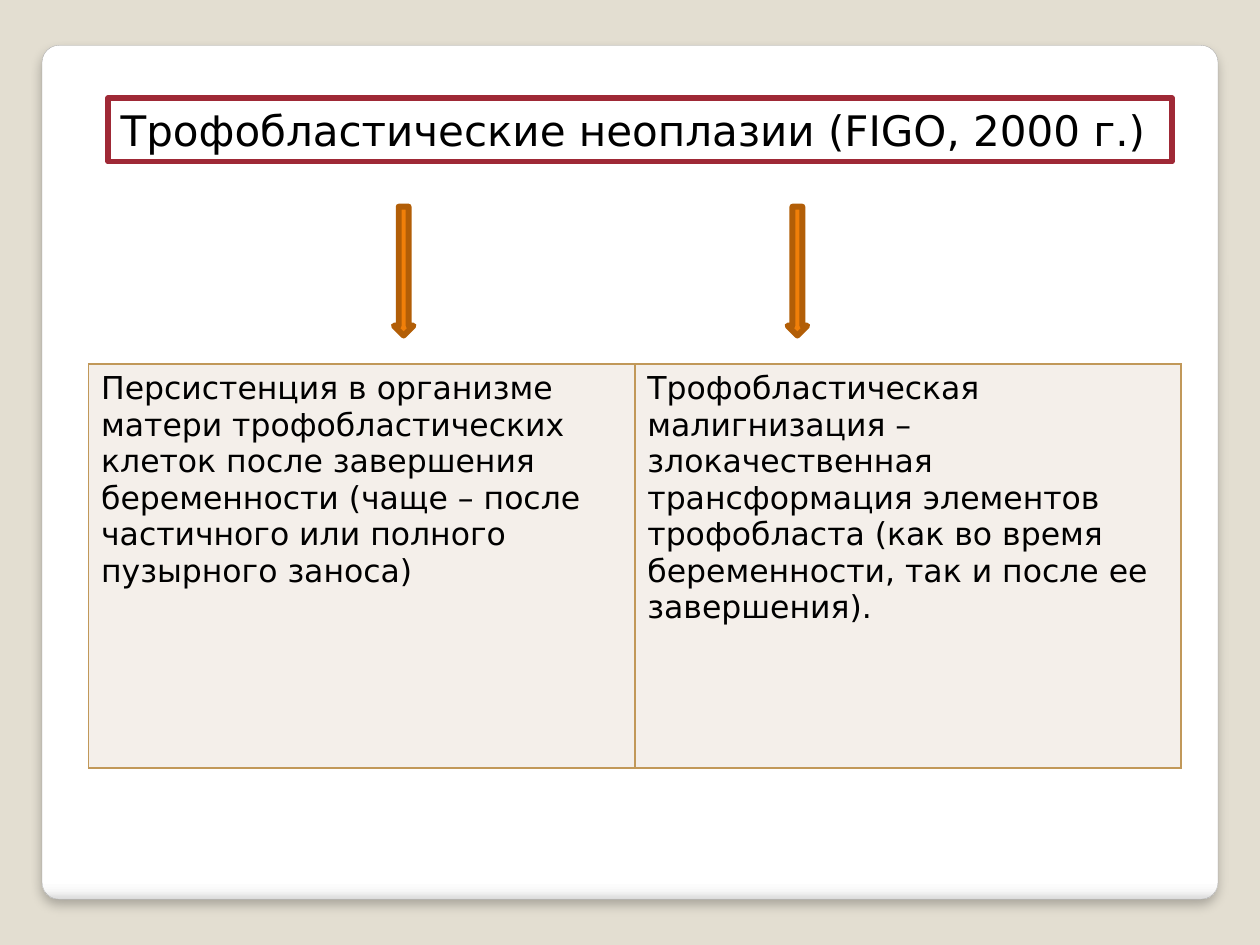
from lxml import etree
from pptx import Presentation
from pptx.dml.color import RGBColor
from pptx.enum.shapes import MSO_SHAPE
from pptx.enum.text import MSO_ANCHOR, MSO_AUTO_SIZE, PP_ALIGN
from pptx.oxml import parse_xml
from pptx.oxml.ns import nsdecls, qn
from pptx.util import Pt

ROUND_RECT, RECT = MSO_SHAPE.ROUNDED_RECTANGLE, MSO_SHAPE.RECTANGLE
DOWN_ARROW = MSO_SHAPE.DOWN_ARROW
LEFT, MIDDLE = PP_ALIGN.LEFT, MSO_ANCHOR.MIDDLE
FIT_SHAPE = MSO_AUTO_SIZE.SHAPE_TO_FIT_TEXT

COLORS = {
    "background": "E3DED1", "panel_line": "A4A4A4", "white": "FFFFFF",
    "text": "000000", "title_line": "9F2936",
    "arrow": "F07F09", "arrow_line": "B25E07",
    "cell": "F4EFEA", "border": "C19859",
}
PANEL_STOPS = [(0, "FFFFFF"), (98, "FFFFFF"), (99, "F7F7F7"), (100, "DADADA")]


def rgb(name):
    return RGBColor.from_string(COLORS[name])


def write(tf, text, size, color="text", font="DejaVu Sans", align=LEFT):
    p = tf.paragraphs[0]
    p.alignment = align
    r = p.add_run()
    r.text = text
    r.font.size = Pt(size)
    r.font.name = font
    r.font.color.rgb = rgb(color)


prs = Presentation()
prs.slide_width, prs.slide_height = Pt(720), Pt(540)
s = prs.slides.add_slide(prs.slide_layouts[6])
s.background.fill.solid()
s.background.fill.fore_color.rgb = rgb("background")

# Panel with a shaded bottom edge and a soft shadow
panel = s.shapes.add_shape(ROUND_RECT, Pt(24), Pt(25.9), Pt(672), Pt(488))
panel.adjustments[0] = 0.02
panel.line.color.rgb = rgb("panel_line")
panel.line.width = Pt(0.16)
panel.fill.gradient()
panel.fill.gradient_angle = 270
stops = panel._element.spPr.find(qn("a:gradFill")).find(qn("a:gsLst"))
for old in list(stops):
    stops.remove(old)
for percent, color in PANEL_STOPS:
    gs = etree.SubElement(stops, qn("a:gs"), pos=str(percent * 1000))
    etree.SubElement(gs, qn("a:srgbClr"), val=color)
panel.shadow.inherit = False
panel._element.spPr.find(qn("a:effectLst")).append(parse_xml(
    f'<a:outerShdw {nsdecls("a")} blurRad="{Pt(6)}" dist="{Pt(4)}" dir="5400000"'
    ' algn="t" rotWithShape="0"><a:srgbClr val="000000">'
    '<a:alpha val="25000"/></a:srgbClr></a:outerShdw>'))

# Table of the two forms
forms = [
    "Персистенция в организме матери трофобластических клеток после завершения "
    "беременности (чаще – после частичного или полного пузырного заноса)",
    "Трофобластическая малигнизация – злокачественная трансформация элементов "
    "трофобласта (как во время беременности, так и после ее завершения).",
]
table = s.shapes.add_table(1, 2, Pt(50.6), Pt(208), Pt(624.4), Pt(230.8)).table
table.first_row = table.horz_banding = False
for cell, text in zip(table.rows[0].cells, forms):
    write(cell.text_frame, text, 18)
    cell.fill.solid()
    cell.fill.fore_color.rgb = rgb("cell")
    tc_pr = cell._tc.get_or_add_tcPr()
    for i, side in enumerate(("lnL", "lnR", "lnT", "lnB")):
        tc_pr.insert(i, parse_xml(
            f'<a:{side} {nsdecls("a")} w="{Pt(1)}"><a:solidFill>'
            f'<a:srgbClr val="{COLORS["border"]}"/></a:solidFill></a:{side}>'))

# Title box and the arrows down to the table
outlined = [
    (RECT, 61.9, 56, 607.7, 36.35, "white", "title_line"),
    (DOWN_ARROW, 225, 118.1, 11.3, 73.7, "arrow", "arrow_line"),
    (DOWN_ARROW, 450, 118.1, 11.3, 73.7, "arrow", "arrow_line"),
]
for kind, x, y, w, h, fill, line in outlined:
    sp = s.shapes.add_shape(kind, Pt(x), Pt(y), Pt(w), Pt(h))
    sp.shadow.inherit = False
    sp.fill.solid()
    sp.fill.fore_color.rgb = rgb(fill)
    sp.line.color.rgb = rgb(line)
    sp.line.width = Pt(3.35)
    if kind == RECT:
        tf = sp.text_frame
        tf.word_wrap = False
        tf.auto_size = FIT_SHAPE
        tf.vertical_anchor = MIDDLE
        write(tf, "Трофобластические неоплазии (FIGO, 2000 г.)", 24)

prs.save("out.pptx")
